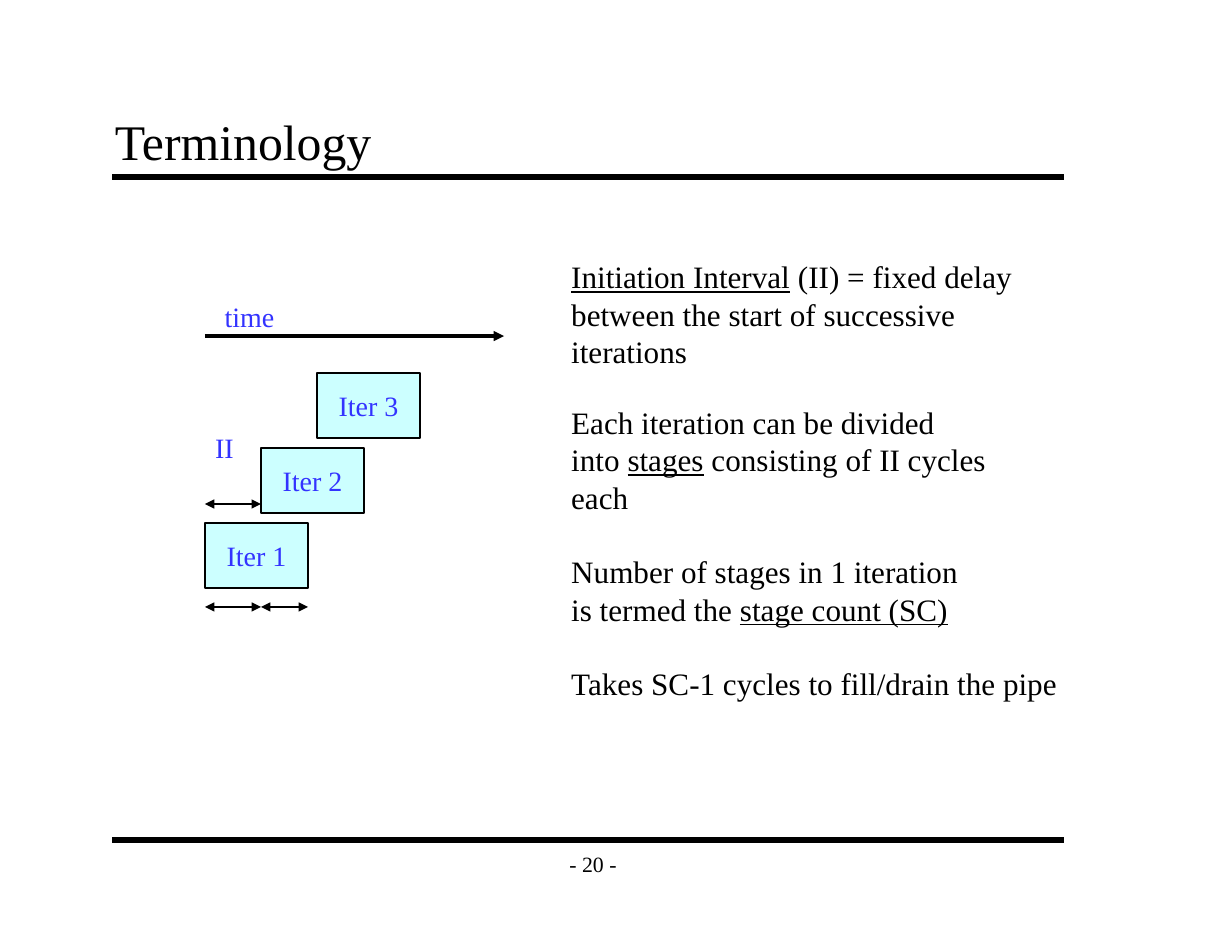
from dataclasses import dataclass

from lxml.etree import SubElement
from pptx import Presentation
from pptx.dml.color import RGBColor
from pptx.enum.shapes import MSO_CONNECTOR, MSO_SHAPE
from pptx.enum.text import MSO_ANCHOR, MSO_AUTO_SIZE, PP_ALIGN
from pptx.oxml.ns import qn
from pptx.util import Emu, Pt

EMU_PER_PX = 914400 / 112
FONT = "Times New Roman"
BLACK = "000000"
BLUE = "3333FF"
CYAN = "CCFFFF"
ORIGIN = 205
STAGE = 56
BOX_WIDTH = 103
BOX_HEIGHT = 65
ROW_STEP = 75


@dataclass
class Run:
    text: str
    underline: bool = False


@dataclass
class Line:
    left: int
    right: int
    y: int
    width: float
    head: bool = False
    tail: bool = False


@dataclass
class Label:
    text: str
    left: int
    top: int
    width: int
    height: int
    size: int = 18
    color: str = BLUE


@dataclass
class Note:
    runs: list[Run]
    gap: float = 0


LINES = [
    Line(112, 1064, 177, 4),
    Line(112, 1064, 840, 4),
    Line(ORIGIN, ORIGIN + STAGE, 504, 1, True, True),
    Line(ORIGIN, 504, 336, 2.25, tail=True),
    Line(ORIGIN, ORIGIN + STAGE, 607, 1, True, True),
    Line(ORIGIN + STAGE, ORIGIN + BOX_WIDTH, 607, 1, True, True),
]
LABELS = [
    Label("II", 204, 425, 41, 45),
    Label("time", 213, 294, 73, 45),
    Label("- 20 -", 551, 840, 84, 47, 14, BLACK),
]
NOTES = [
    Note([Run("Initiation Interval", True), Run(" (II) = fixed delay")]),
    Note([Run("between the start of successive iterations")]),
    Note([Run("Each iteration can be divided")], 21.6),
    Note([Run("into "), Run("stages", True), Run(" consisting of II cycles")]),
    Note([Run("each")]),
    Note([Run("Number of stages in 1 iteration")], 24),
    Note([Run("is termed the "), Run("stage count (SC)", True)]),
    Note([Run("Takes SC-1 cycles to fill/drain the pipe")], 24),
]


def px(value: int) -> Emu:
    return Emu(round(value * EMU_PER_PX))


def rgb(color: str) -> RGBColor:
    return RGBColor.from_string(color)


def apply(target, values: dict) -> None:
    for name, value in values.items():
        setattr(target, name, value)


def place(shape, left: int, top: int, width: int, height: int) -> None:
    apply(shape, {"left": px(left), "top": px(top), "width": px(width), "height": px(height)})


def format_frame(frame, anchor, wrap: bool, **margins) -> None:
    apply(frame, {"auto_size": MSO_AUTO_SIZE.NONE, "vertical_anchor": anchor,
                  "word_wrap": wrap, **margins})


def add_run(paragraph, run: Run, size: int, color: str) -> None:
    text_run = paragraph.add_run()
    text_run.text = run.text
    apply(text_run.font, {"name": FONT, "size": Pt(size), "underline": run.underline})
    text_run.font.color.rgb = rgb(color)


def add_line(slide, line: Line) -> None:
    connector = slide.shapes.add_connector(
        MSO_CONNECTOR.STRAIGHT, px(line.left), px(line.y), px(line.right), px(line.y))
    connector.line.width = Pt(line.width)
    connector.line.color.rgb = rgb(BLACK)
    outline = connector.line._get_or_add_ln()
    for tag, present in (("a:headEnd", line.head), ("a:tailEnd", line.tail)):
        if present:
            SubElement(outline, qn(tag), type="triangle")
    SubElement(connector._element.spPr, qn("a:effectLst"))


def add_label(slide, label: Label) -> None:
    box = slide.shapes.add_textbox(
        px(label.left), px(label.top), px(label.width), px(label.height))
    format_frame(box.text_frame, MSO_ANCHOR.MIDDLE, False)
    paragraph = box.text_frame.paragraphs[0]
    paragraph.alignment = PP_ALIGN.CENTER
    add_run(paragraph, Run(label.text), label.size, label.color)


def add_iteration(slide, number: int) -> None:
    index = number - 1
    box = slide.shapes.add_shape(
        MSO_SHAPE.RECTANGLE, px(ORIGIN + index * STAGE), px(523 - index * ROW_STEP),
        px(BOX_WIDTH), px(BOX_HEIGHT))
    box.shadow.inherit = False
    box.fill.solid()
    box.fill.fore_color.rgb = rgb(CYAN)
    box.line.color.rgb = rgb(BLACK)
    box.line.width = Pt(1)
    format_frame(box.text_frame, MSO_ANCHOR.MIDDLE, False)
    paragraph = box.text_frame.paragraphs[0]
    paragraph.alignment = PP_ALIGN.CENTER
    add_run(paragraph, Run(f"Iter {number}"), 18, BLUE)


def fill_title(title) -> None:
    place(title, 103, 103, 952, 75)
    format_frame(title.text_frame, MSO_ANCHOR.BOTTOM, True, margin_left=px(12),
                 margin_right=px(12), margin_top=px(7), margin_bottom=px(7))
    paragraph = title.text_frame.paragraphs[0]
    paragraph.alignment = PP_ALIGN.LEFT
    add_run(paragraph, Run("Terminology"), 32, BLACK)


def fill_notes(body) -> None:
    place(body, 560, 252, 526, 418)
    format_frame(body.text_frame, MSO_ANCHOR.TOP, True)
    for index, note in enumerate(NOTES):
        frame = body.text_frame
        paragraph = frame.add_paragraph() if index else frame.paragraphs[0]
        apply(paragraph, {"alignment": PP_ALIGN.LEFT, "line_spacing": Pt(24),
                          "space_before": Pt(note.gap), "space_after": Pt(0)})
        properties = paragraph._p.get_or_add_pPr()
        properties.set("marL", "0")
        properties.set("indent", "0")
        SubElement(properties, qn("a:buNone"))
        for run in note.runs:
            add_run(paragraph, run, 20, BLACK)


def main() -> None:
    presentation = Presentation()
    apply(presentation, {"slide_width": px(1232), "slide_height": px(952)})
    slide = presentation.slides.add_slide(presentation.slide_layouts[1])
    fill_title(slide.shapes.title)
    fill_notes(slide.placeholders[1])
    for number in range(1, 4):
        add_iteration(slide, number)
    for line in LINES:
        add_line(slide, line)
    for label in LABELS:
        add_label(slide, label)
    presentation.save("out.pptx")


if __name__ == "__main__":
    main()
